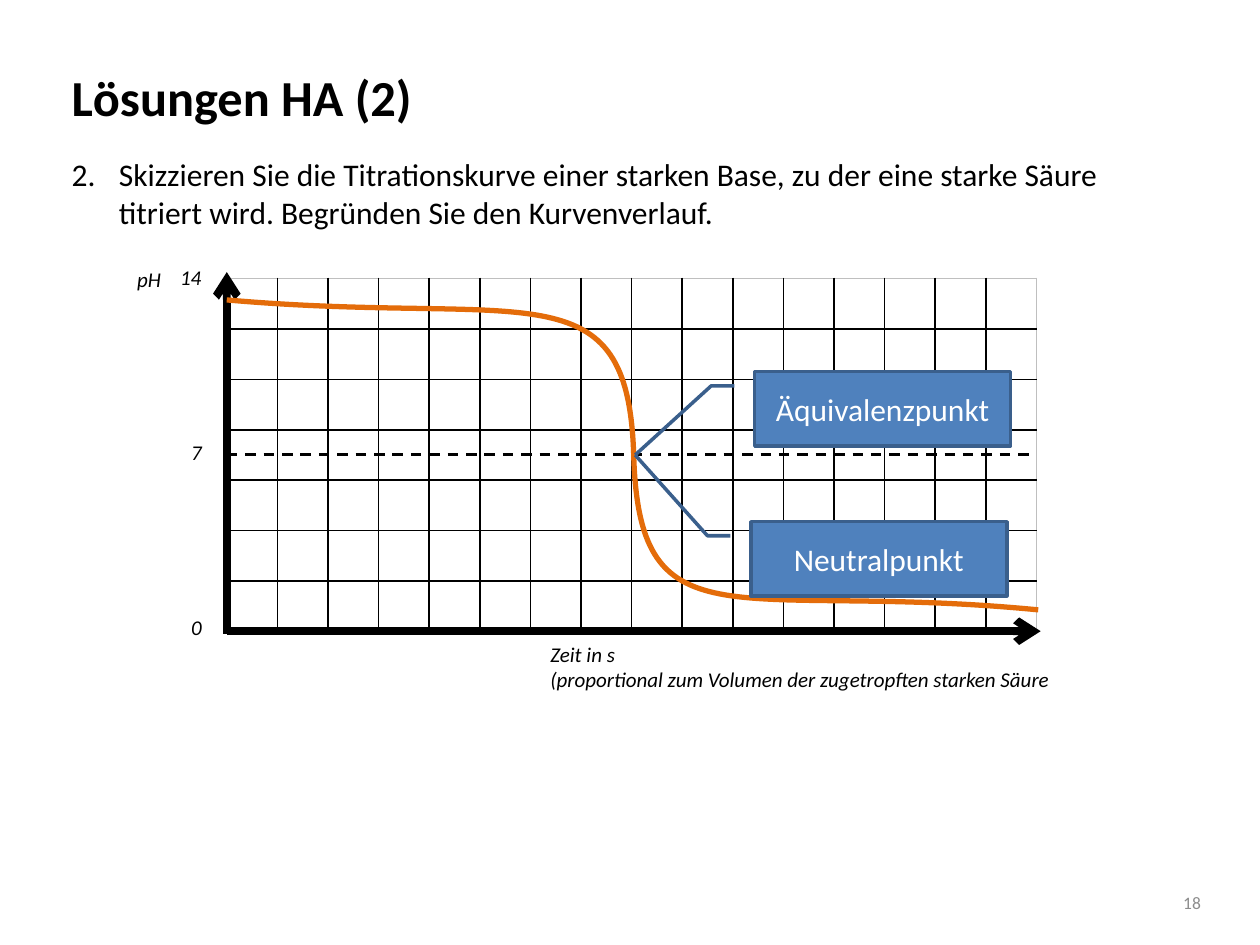
from dataclasses import dataclass

from lxml.etree import SubElement
from pptx import Presentation
from pptx.dml.color import RGBColor as Color
from pptx.enum.dml import MSO_LINE_DASH_STYLE as Dash
from pptx.enum.shapes import MSO_CONNECTOR_TYPE as Connector, MSO_SHAPE as Shape
from pptx.enum.text import MSO_ANCHOR as Anchor, MSO_AUTO_SIZE as AutoSize, PP_ALIGN as Align
from pptx.oxml import parse_xml
from pptx.oxml.ns import nsdecls, qn
from pptx.util import Pt


@dataclass(frozen=True)
class Theme:
    font: str = "Calibri"
    ink: str = "000000"
    muted: str = "8C8C8C"
    frame: str = "BFBFBF"
    curve: str = "E46C0A"
    callout: str = "4F81BD"
    callout_edge: str = "3A5F8C"
    white: str = "FFFFFF"
    title: float = 28.8
    body: float = 18
    label: float = 12
    small: float = 10


THEME = Theme()
LEFT, TOP = 129.6, 159.1
COLUMNS, ROWS = 16, 7
CELL_WIDTH, CELL_HEIGHT = 28.92, 28.8
AXIS_Y = 360.7


def add_span(para, text, size, color=THEME.ink, bold=False, italic=False):
    span = para.add_run()
    span.text = text
    span.font.name = THEME.font
    span.font.size = Pt(size)
    span.font.bold = bold
    span.font.italic = italic
    span.font.color.rgb = Color.from_string(color)


def add_box(page, left, top, width, height, anchor=Anchor.TOP):
    box = page.shapes.add_textbox(Pt(left), Pt(top), Pt(width), Pt(height))
    box.text_frame.word_wrap = True
    box.text_frame.vertical_anchor = anchor
    return box.text_frame


def add_title(page, text):
    frame = add_box(page, 33.84, 33.84, 652.3, 42.5, Anchor.MIDDLE)
    add_span(frame.paragraphs[0], text, THEME.title, bold=True)


def add_task(page, number, text):
    para = add_box(page, 33.84, 85, 652.3, 396.7).paragraphs[0]
    para.space_before = Pt(3.6)
    properties = para._p.get_or_add_pPr()
    properties.set("marL", str(Pt(27)))
    properties.set("indent", str(Pt(-27)))
    SubElement(properties, qn("a:buAutoNum"), type="arabicPeriod", startAt=str(number))
    add_span(para, text, THEME.body)


def add_page_number(page, text):
    frame = add_box(page, 629.3, 504.7, 56.9, 17.3, Anchor.BOTTOM)
    frame.margin_left = frame.margin_right = frame.margin_top = frame.margin_bottom = 0
    frame.paragraphs[0].alignment = Align.RIGHT
    add_span(frame.paragraphs[0], text, THEME.small, THEME.muted)


def add_label(page, lines, left, top, width, height=21.8, wrap=False):
    frame = add_box(page, left, top, width, height)
    frame.word_wrap = wrap
    frame.auto_size = AutoSize.SHAPE_TO_FIT_TEXT
    for index, text in enumerate(lines):
        para = frame.add_paragraph() if index else frame.paragraphs[0]
        add_span(para, text, THEME.label, italic=True)


def set_borders(cell, colors):
    properties = cell._tc.get_or_add_tcPr()
    for index, (side, color) in enumerate(colors.items()):
        properties.insert(index, parse_xml(
            f'<a:ln{side} {nsdecls("a")} w="{Pt(1)}"><a:solidFill>'
            f'<a:srgbClr val="{color}"/></a:solidFill></a:ln{side}>'))


def add_grid(page):
    table = page.shapes.add_table(
        ROWS, COLUMNS, Pt(LEFT), Pt(TOP),
        Pt(COLUMNS * CELL_WIDTH), Pt(ROWS * CELL_HEIGHT)).table
    table.first_row = table.horz_banding = False
    for column in table.columns:
        column.width = Pt(CELL_WIDTH)
    for y, row in enumerate(table.rows):
        row.height = Pt(CELL_HEIGHT)
        for x, cell in enumerate(row.cells):
            cell.fill.background()
            set_borders(cell, {
                "L": THEME.ink,
                "R": THEME.frame if x == COLUMNS - 1 else THEME.ink,
                "T": THEME.frame if y == 0 else THEME.ink,
                "B": THEME.ink})


def add_line(page, start, end, width, dash=None, arrow=False):
    line = page.shapes.add_connector(Connector.STRAIGHT, *map(Pt, start + end))
    line.line.color.rgb = Color.from_string(THEME.ink)
    line.line.width = Pt(width)
    if dash:
        line.line.dash_style = dash
    if arrow:
        SubElement(line.line._get_or_add_ln(), qn("a:tailEnd"), type="arrow")
    SubElement(line._element.spPr, qn("a:effectLst"))


def add_curve(page, start, segments):
    builder = page.shapes.build_freeform(Pt(start[0]), Pt(start[1]))
    builder.add_line_segments(
        [tuple(map(Pt, segment[-1])) for segment in segments], close=False)
    curve = builder.convert_to_shape()
    for line, segment in zip(curve._element.xpath(".//a:lnTo"), segments):
        line.tag = qn("a:cubicBezTo")
        for index, (x, y) in enumerate(segment[:2]):
            point = SubElement(line, qn("a:pt"), x=str(Pt(x) - curve.left), y=str(Pt(y) - curve.top))
            line.insert(index, point)
    curve.shadow.inherit = False
    curve.fill.background()
    curve.line.color.rgb = Color.from_string(THEME.curve)
    curve.line.width = Pt(3)


def add_callout(page, text, left, top, target):
    width, height = 146.2, 42.5
    callout = page.shapes.add_shape(
        Shape.LINE_CALLOUT_2, Pt(left), Pt(top), Pt(width), Pt(height))
    tip = ((target[1] - top) / height, (target[0] - left) / width)
    for index, value in enumerate((0.19, -0.08, 0.19, -0.17) + tip):
        callout.adjustments[index] = value
    callout.shadow.inherit = False
    callout.fill.solid()
    callout.fill.fore_color.rgb = Color.from_string(THEME.callout)
    callout.line.color.rgb = Color.from_string(THEME.callout_edge)
    callout.line.width = Pt(2)
    frame = callout.text_frame
    frame.vertical_anchor = Anchor.MIDDLE
    frame.paragraphs[0].alignment = Align.CENTER
    add_span(frame.paragraphs[0], text, THEME.body, THEME.white)


def main():
    deck = Presentation()
    deck.slide_width, deck.slide_height = Pt(720), Pt(540)
    page = deck.slides.add_slide(deck.slide_layouts[6])

    add_title(page, "Lösungen HA (2)")
    add_page_number(page, "18")
    add_task(page, 2, "Skizzieren Sie die Titrationskurve einer starken Base, zu der eine "
                      "starke Säure titriert wird. Begründen Sie den Kurvenverlauf.")
    add_grid(page)
    add_line(page, (LEFT, 362.2), (LEFT, 155.5), 4.5, arrow=True)
    add_line(page, (LEFT, AXIS_Y), (594.7, AXIS_Y), 4.5, arrow=True)

    add_label(page, ["Zeit in s", "(proportional zum Volumen der zugetropften starken Säure"],
              307.4, 362.9, 346.3, 36, wrap=True)
    for text, left, top, width in (("pH", 71.3, 149, 28.1), ("14", 95.8, 147.6, 26.6),
                                   ("7", 102.2, 247.7, 20.9), ("0", 102.2, 347.8, 20.9)):
        add_label(page, [text], left, top, width)

    add_line(page, (LEFT, 259.9), (591.8, 259.9), 1.5, dash=Dash.DASH)
    add_curve(page, (LEFT, 171.4), [
        ((301, 186.5), (359.3, 150.5), (362.2, 261.4)),
        ((365.8, 371.5), (421.9, 331.9), (593.3, 348.5))])
    midpoint = (363, 260)
    add_callout(page, "Äquivalenzpunkt", 431.3, 212.4, midpoint)
    add_callout(page, "Neutralpunkt", 429.1, 298.1, midpoint)
    deck.save("out.pptx")


if __name__ == "__main__":
    main()
